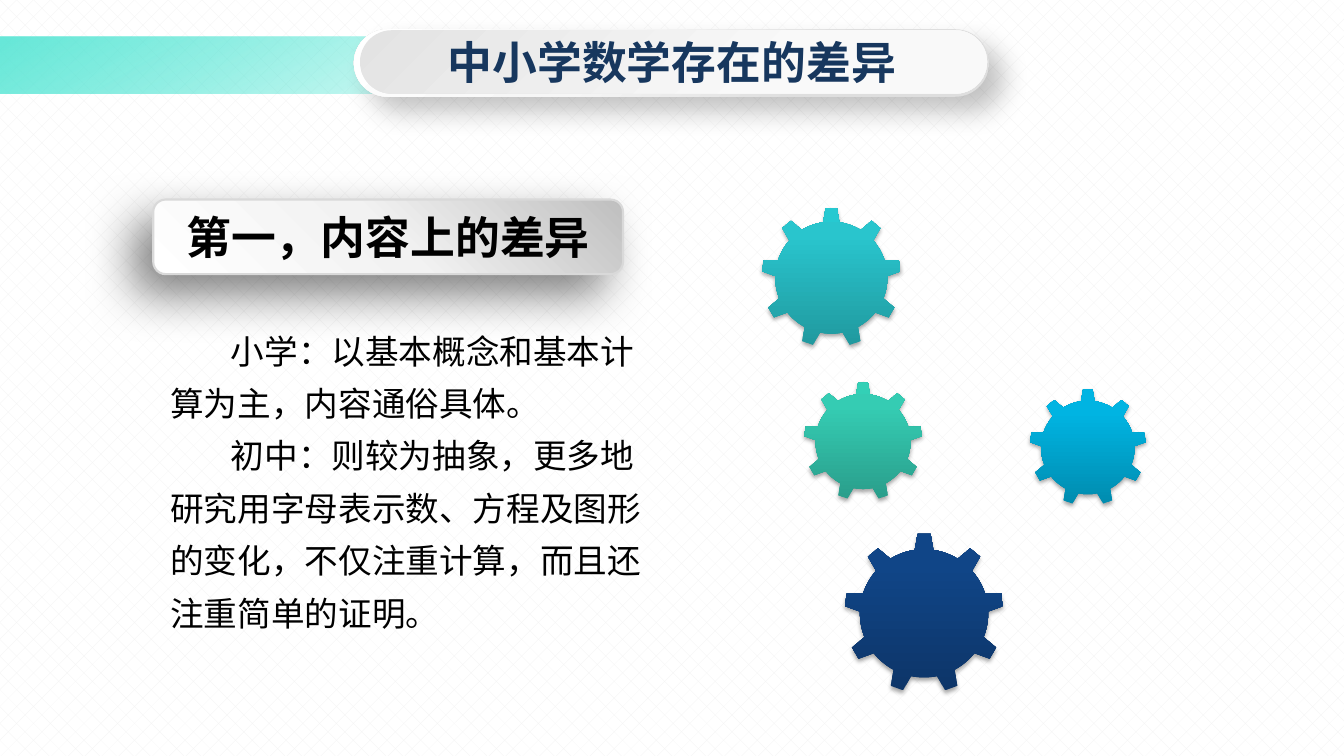
from dataclasses import dataclass
from lxml import etree
from pptx import Presentation
from pptx.dml.color import RGBColor
from pptx.enum.dml import MSO_PATTERN
from pptx.enum.shapes import MSO_SHAPE as Preset
from pptx.enum.text import MSO_ANCHOR as Anchor, MSO_AUTO_SIZE as AutoSize, PP_ALIGN as Align
from pptx.oxml.ns import qn
from pptx.util import Inches, Pt

TITLE = "中小学数学存在的差异"
HEADING = "第一，内容上的差异"
BODY = [
    "小学：以基本概念和基本计算为主，内容通俗具体。",
    "初中：则较为抽象，更多地研究用字母表示数、方程及图形的变化，不仅注重计算，而且还注重简单的证明。",
]
GEARS = [
    (7.97, 3.79, 1.18, ("299D8A", "35CCB3", "33D0B6")),
    (8.37, 5.29, 1.59, ("0D3568", "104587", "0E458A")),
    (7.55, 2.06, 1.39, ("20989E", "29C5CD", "26C9D1")),
    (10.21, 3.86, 1.16, ("008BAE", "00B4E2", "00B5E3")),
]
GEAR_STOPS = (0, 80, 100)


@dataclass(frozen=True)
class Theme:
    latin: str = "Calibri"
    asian: str = "Noto Sans CJK SC"
    title: str = "17375E"
    text: str = "000000"
    outline: str = "D9D9D9"
    dots: str = "F2F2F2"
    paper: str = "FFFFFF"
    heading_size: int = 32
    body_size: int = 24
    band: tuple = ((1, "4EE4D2", 85), (50, "20E2CB", 0))
    pill_rim: tuple = ((1, "DEDEDE"), (30, "E0E0E0"), (61, "F6F6F6"), (100, "FFFFFF"))
    pill_face: tuple = ((0, "E3E3E3"), (67, "F9F9F9"))
    plate: tuple = ((0, "FFFFFF"), (50, "F2F2F2"), (100, "BFBFBF"))
    pill_shadow: tuple = (24, 19, 14, 45)
    plate_shadow: tuple = (50, 35, 20, 135)
    gear_shadow: tuple = (35, 3.1, 1.8, 90)


theme = Theme()


def apply(target, values):
    for name, value in values.items():
        setattr(target, name, value)


def add_color(parent, color, opacity):
    node = etree.SubElement(parent, qn("a:srgbClr"), val=color)
    if opacity < 100:
        etree.SubElement(node, qn("a:alpha"), val=str(opacity * 1000))


def paint_gradient(shape, stops, angle):
    shape.fill.gradient()
    gradient = shape.element.spPr.find(qn("a:gradFill"))
    for child in list(gradient):
        gradient.remove(child)
    stop_list = etree.SubElement(gradient, qn("a:gsLst"))
    for position, color, *opacity in stops:
        stop = etree.SubElement(stop_list, qn("a:gs"), pos=str(position * 1000))
        add_color(stop, color, *(opacity or [100]))
    etree.SubElement(gradient, qn("a:lin"), ang=str(angle * 60000), scaled="0")


def cast_shadow(shape, opacity, blur, distance, direction):
    effects = shape.element.spPr.find(qn("a:effectLst"))
    shadow = etree.SubElement(
        effects, qn("a:outerShdw"), blurRad=str(Pt(blur)), dist=str(Pt(distance)),
        dir=str(direction * 60000), algn="ctr", rotWithShape="0")
    add_color(shadow, theme.text, opacity)


def add_panel(page, preset, frame, stops, angle, shadow=None, rounding=None):
    shape = page.shapes.add_shape(preset, *map(Inches, frame))
    shape.shadow.inherit = False
    shape.line.fill.background()
    paint_gradient(shape, stops, angle)
    if shadow:
        cast_shadow(shape, *shadow)
    if rounding:
        shape.adjustments[0] = rounding
    return shape


def write(box, lines, size, color, latin, bold=False, frame=None, para_format=None, indent=0):
    text = box.text_frame
    apply(text, {"word_wrap": True, **(frame or {})})
    for number, line in enumerate(lines):
        para = text.add_paragraph() if number else text.paragraphs[0]
        apply(para, {"space_before": Pt(0), **(para_format or {})})
        if indent:
            apply(para._p.get_or_add_pPr(), {"indent": Inches(indent)})
            para._p.get_or_add_pPr().set("indent", str(Inches(indent)))
        span = para.add_run()
        span.text = line
        apply(span.font, {"size": Pt(size), "bold": bold, "name": latin})
        span.font.color.rgb = RGBColor.from_string(color)
        latin_node = span.font._element.find(qn("a:latin"))
        asian_node = etree.Element(qn("a:ea"), typeface=theme.asian)
        latin_node.addnext(asian_node)


def main():
    deck = Presentation()
    apply(deck, {"slide_width": Inches(13.33), "slide_height": Inches(7.5)})
    page = deck.slides.add_slide(deck.slide_layouts[5])

    backdrop = page.background.fill
    backdrop.patterned()
    backdrop.pattern = MSO_PATTERN.DOTTED_DIAMOND
    backdrop.fore_color.rgb = RGBColor.from_string(theme.dots)
    backdrop.back_color.rgb = RGBColor.from_string(theme.paper)

    add_panel(page, Preset.RECTANGLE, (-0.01, 0.36, 13.17, 0.57), theme.band, 60)
    add_panel(page, Preset.ROUNDED_RECTANGLE, (3.51, 0.29, 6.3, 0.67),
              theme.pill_rim, 225, theme.pill_shadow, 0.5)
    add_panel(page, Preset.ROUNDED_RECTANGLE, (3.57, 0.3, 6.22, 0.63),
              theme.pill_face, 45, rounding=0.5)

    title = page.shapes.title
    title.element.getparent().append(title.element)
    apply(title, dict(zip(("left", "top", "width", "height"),
                          map(Inches, (3.81, 0.29, 5.71, 0.64)))))
    write(title, [TITLE], theme.heading_size, theme.title, theme.asian, True,
          {"vertical_anchor": Anchor.MIDDLE, "auto_size": AutoSize.NONE},
          {"alignment": Align.CENTER})

    insets = {"margin_left": Inches(0.13), "margin_right": Inches(0.13),
              "margin_top": Inches(0.07), "margin_bottom": Inches(0.07)}
    plate = add_panel(page, Preset.ROUNDED_RECTANGLE, (1.52, 1.98, 4.66, 0.74),
                      theme.plate, 315, theme.plate_shadow)
    plate.line.color.rgb = RGBColor.from_string(theme.outline)
    plate.line.width = Pt(1.5)
    write(plate, [HEADING], theme.heading_size, theme.text, theme.latin, True,
          {**insets, "vertical_anchor": Anchor.MIDDLE}, {"alignment": Align.CENTER})

    for left, top, size, colors in GEARS:
        add_panel(page, Preset.GEAR_9, (left, top, size, size),
                  tuple(zip(GEAR_STOPS, colors)), 270, theme.gear_shadow)

    body = page.shapes.add_textbox(*map(Inches, (1.56, 3.09, 5.08, 3.28)))
    write(body, BODY, theme.body_size, theme.text, theme.latin,
          frame={**insets, "auto_size": AutoSize.SHAPE_TO_FIT_TEXT},
          para_format={"line_spacing": 1.3}, indent=0.6)

    deck.save("out.pptx")


if __name__ == "__main__":
    main()
